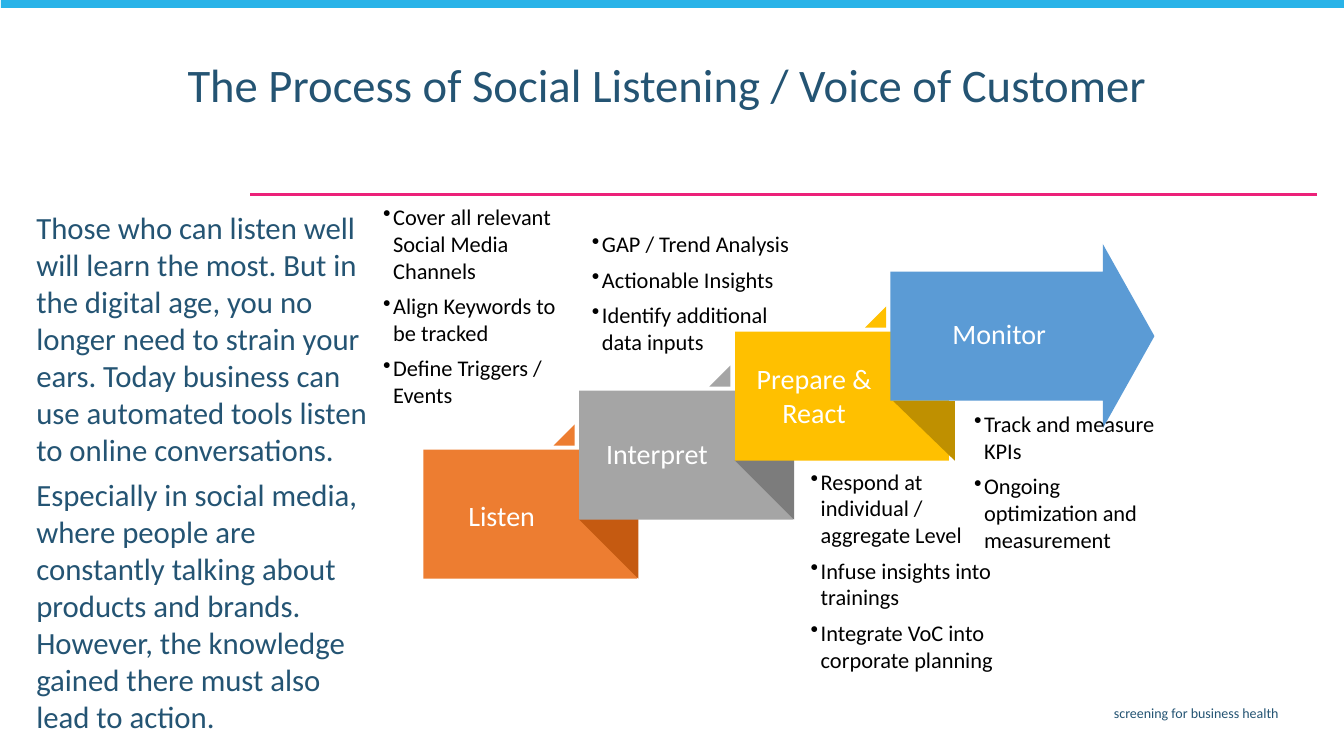
import lxml.etree
import pptx
import pptx.dml.color
import pptx.enum.shapes
import pptx.enum.text
import pptx.oxml.ns
import pptx.util

Inches = pptx.util.Inches
Pt = pptx.util.Pt
SHAPE = pptx.enum.shapes.MSO_SHAPE
ALIGN = pptx.enum.text.PP_ALIGN
ANCHOR = pptx.enum.text.MSO_ANCHOR

HUES = {
    "navy": "245473", "pink": "EC2179", "sky": "29B3E8",
    "white": "FFFFFF", "black": "000000",
    "orange": "ED7D31", "rust": "C55A11",
    "grey": "A5A5A5", "slate": "7C7C7C",
    "gold": "FFC000", "ochre": "BF9000", "blue": "5B9BD5",
}
# Block fill, fold fill, fold offset from the block's left, fold width
STEPS = [
    ("orange", "rust", 1.54, 0.59),
    ("grey", "slate", 1.54, 0.59),
    ("gold", "ochre", 1.57, 0.61),
]
LABELS = [
    ("Listen", (4.28, 4.91, 1.39, 0.43)),
    ("Interpret", (5.82, 4.29, 1.39, 0.43)),
    ("Prepare &\vReact", (7.38, 3.55, 1.39, 0.76)),
    ("Monitor", (8.95, 3.1, 1.92, 0.43)),
]
NOTES = [
    ((3.71, 1.95, 1.96, 2.14), ANCHOR.BOTTOM,
     ["Cover all relevant Social Media Channels",
      "Align Keywords to be tracked",
      "Define Triggers / Events"]),
    ((5.78, 2.22, 2.21, 1.34), ANCHOR.BOTTOM,
     ["GAP / Trend Analysis",
      "Actionable Insights",
      "Identify additional data inputs"]),
    ((7.95, 4.6, 2.12, 2.5), ANCHOR.TOP,
     ["Respond at individual / aggregate Level",
      "Infuse insights into trainings",
      "Integrate VoC into corporate planning"]),
    ((9.57, 4.03, 2.12, 1.87), ANCHOR.TOP,
     ["Track and measure KPIs",
      "Ongoing optimization and measurement"]),
]
STORY = [
    "Those who can listen well will learn the most. But in the digital age, "
    "you no longer need to strain your ears. Today business can use automated "
    "tools listen to online conversations.",
    "Especially in social media, where people are constantly talking about "
    "products and brands. However, the knowledge gained there must also lead "
    "to action.",
]


def hue(name):
    return pptx.dml.color.RGBColor.from_string(HUES[name])


def apply(item, values):
    for key, value in values.items():
        setattr(item, key, value)


class Deck:
    font = "Calibri"

    def __init__(self):
        self.show = pptx.Presentation()
        apply(self.show, {"slide_width": Inches(13.33),
                          "slide_height": Inches(7.5)})
        self.slide = self.show.slides.add_slide(self.show.slide_layouts[5])
        self.shapes = self.slide.shapes

    def fill(self, box, paras, size, tint, align=ALIGN.LEFT,
             anchor=ANCHOR.TOP, pad=0.04, lead=None, bullet=False):
        """Put styled paragraphs into a box."""
        frame = box.text_frame
        side = Inches(0.1 if pad == 0.05 else 0.09)
        apply(frame, {
            "word_wrap": True, "vertical_anchor": anchor,
            "auto_size": pptx.enum.text.MSO_AUTO_SIZE.NONE,
            "margin_left": side, "margin_right": side,
            "margin_top": Inches(pad), "margin_bottom": Inches(pad)})
        frame.text = "\n".join(paras)
        for rank, para in enumerate(frame.paragraphs):
            if bullet:
                self.dot(para)
            apply(para, {"alignment": align, "line_spacing": lead,
                         "space_before": Pt(6 if rank else 0)})
            for run in para.runs:
                apply(run.font, {"name": self.font, "size": Pt(size)})
                run.font.color.rgb = hue(tint)

    def dot(self, para):
        """Give the paragraph a round bullet with a hanging indent."""
        props = para._p.get_or_add_pPr()
        props.set("marL", str(Inches(0.1)))
        props.set("indent", str(Inches(-0.1)))
        mark = pptx.oxml.ns.qn("a:buChar")
        lxml.etree.SubElement(props, mark).set("char", "•")

    def title(self, place, text):
        head = self.shapes.title
        keys = ("left", "top", "width", "height")
        apply(head, dict(zip(keys, map(Inches, place))))
        self.fill(head, [text], 33.3, "navy", pad=0.05, lead=0.9)

    def text(self, place, paras, size, tint, **style):
        box = self.shapes.add_textbox(*map(Inches, place))
        self.fill(box, paras, size, tint, **style)

    def paint(self, shape, tint):
        shape.shadow.inherit = False
        shape.fill.solid()
        shape.fill.fore_color.rgb = hue(tint)
        shape.line.fill.background()

    def shape(self, kind, place, tint, adjust=()):
        item = self.shapes.add_shape(kind, *map(Inches, place))
        for rank, value in enumerate(adjust):
            item.adjustments[rank] = value
        self.paint(item, tint)

    def fold(self, left, top, width, height, tint):
        """Draw the dark corner that hangs below the next block."""
        pen = self.shapes.build_freeform(Inches(left), Inches(top))
        pen.add_line_segments([
            (Inches(left + width), Inches(top)),
            (Inches(left + width), Inches(top + height))], close=True)
        self.paint(pen.convert_to_shape(), tint)

    def rule(self, start, end, tint, weight):
        line = self.shapes.add_connector(
            pptx.enum.shapes.MSO_CONNECTOR.STRAIGHT,
            *map(Inches, start + end))
        line.line.color.rgb = hue(tint)
        line.line.width = Pt(weight)
        lxml.etree.SubElement(line._element.spPr,
                              pptx.oxml.ns.qn("a:effectLst"))


def main():
    deck = Deck()
    deck.rule((13.06, 1.93), (2.48, 1.93), "pink", 1.5)
    deck.shape(SHAPE.RECTANGLE, (0.01, -0.02, 13.34, 0.1), "sky")
    deck.text((3.65, 6.94, 9.13, 0.29), ["screening for business health"],
              10, "navy", align=ALIGN.RIGHT, pad=0.05)
    deck.title((1.76, 0.57, 9.94, 0.76),
               "The Process of Social Listening / Voice of Customer")
    deck.text((0.27, 2.03, 3.48, 5.36), STORY, 22, "navy")

    for rank, (tint, dark, shift, width) in enumerate(STEPS):
        left, top = 4.2 + 1.545 * rank, 4.46 - 0.585 * rank
        deck.shape(SHAPE.RECTANGLE, (left, top, 2.12, 1.28), tint)
        deck.fold(left + shift, top + 0.69, width, 0.59, dark)
        deck.shape(SHAPE.ISOSCELES_TRIANGLE,
                   (left + 1.29, top - 0.25, 0.21, 0.21), tint, [1])
    deck.shape(SHAPE.RIGHT_ARROW, (8.83, 2.42, 2.62, 1.83), "blue",
               [0.7, 0.28])

    for text, place in LABELS:
        deck.text(place, [text], 20, "white", align=ALIGN.CENTER)
    for place, anchor, paras in NOTES:
        deck.text(place, paras, 16, "black", anchor=anchor, bullet=True)
    deck.show.save("out.pptx")


if __name__ == "__main__":
    main()
